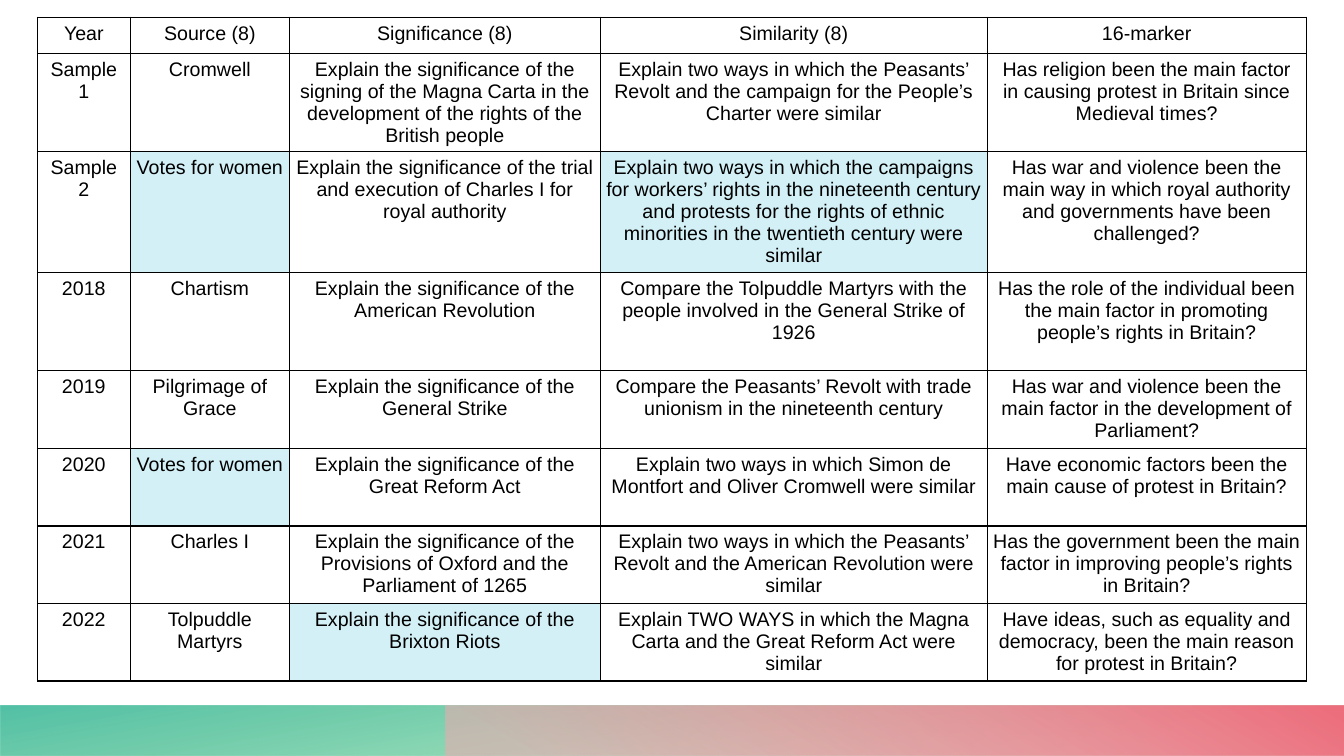
from dataclasses import dataclass

from lxml import etree
from pptx import Presentation
from pptx.dml.color import RGBColor
from pptx.enum import shapes, text
from pptx.oxml import ns
from pptx.util import Pt


@dataclass(frozen=True)
class Theme:
    font: str = "Arial"
    size: float = 14
    ink: str = "000000"
    paper: str = "FFFFFF"
    highlight: str = "D3F0F6"
    border: float = 1
    inset: float = 3.6
    # Each stop: position, colour, opacity in percent
    green: tuple = ((14, "30BA5F", 28), (100, "35B697", 85))
    pink: tuple = ((9, "F5A8B1", 55), (99, "EE6E7D", 100))


THEME = Theme()
PAGE_WIDTH, PAGE_HEIGHT = 960, 540
BAND_HEIGHT = 36
COLUMN_WIDTHS = (66.4, 113.7, 222, 276.5, 227.7)
ROW_HEIGHTS = (25.8, 70.2, 86.4, 70.2, 55.4, 55.4, 55.4, 55.4)
HIGHLIGHTED = {(2, 1), (2, 3), (5, 1), (7, 2)}
QUESTIONS = (
    ("Year", "Source (8)", "Significance (8)", "Similarity (8)", "16-marker"),
    ("Sample 1", "Cromwell",
     "Explain the significance of the signing of the Magna Carta in the "
     "development of the rights of the British people",
     "Explain two ways in which the Peasants’ Revolt and the campaign for the "
     "People’s Charter were similar",
     "Has religion been the main factor in causing protest in Britain since "
     "Medieval times?"),
    ("Sample 2", "Votes for women",
     "Explain the significance of the trial and execution of Charles I for "
     "royal authority",
     "Explain two ways in which the campaigns for workers’ rights in the "
     "nineteenth century and protests for the rights of ethnic minorities in "
     "the twentieth century were similar",
     "Has war and violence been the main way in which royal authority and "
     "governments have been challenged?"),
    ("2018", "Chartism",
     "Explain the significance of the American Revolution",
     "Compare the Tolpuddle Martyrs with the people involved in the General "
     "Strike of 1926",
     "Has the role of the individual been the main factor in promoting "
     "people’s rights in Britain?"),
    ("2019", "Pilgrimage of Grace",
     "Explain the significance of the General Strike",
     "Compare the Peasants’ Revolt with trade unionism in the nineteenth "
     "century",
     "Has war and violence been the main factor in the development of "
     "Parliament?"),
    ("2020", "Votes for women",
     "Explain the significance of the Great Reform Act",
     "Explain two ways in which Simon de Montfort and Oliver Cromwell were "
     "similar",
     "Have economic factors been the main cause of protest in Britain?"),
    ("2021", "Charles I",
     "Explain the significance of the Provisions of Oxford and the Parliament "
     "of 1265",
     "Explain two ways in which the Peasants’ Revolt and the American "
     "Revolution were similar",
     "Has the government been the main factor in improving people’s rights in "
     "Britain?"),
    ("2022", "Tolpuddle Martyrs",
     "Explain the significance of the Brixton Riots",
     "Explain TWO WAYS in which the Magna Carta and the Great Reform Act were "
     "similar",
     "Have ideas, such as equality and democracy, been the main reason for "
     "protest in Britain?"),
)


def add_band(page, left, stops, angle, rotation=0):
    """Add a mirrored gradient band from left to the page's right edge."""
    band = page.shapes.add_shape(
        shapes.MSO_SHAPE.RECTANGLE, Pt(left), Pt(PAGE_HEIGHT - BAND_HEIGHT),
        Pt(PAGE_WIDTH - left), Pt(BAND_HEIGHT))
    band.shadow.inherit = False
    band.line.fill.background()
    band.rotation = rotation
    band._element.spPr.find(ns.qn("a:xfrm")).set("flipH", "1")
    band.fill.gradient()
    band.fill.gradient_angle = 360 - angle  # counted anticlockwise
    for stop, (position, colour, _) in zip(band.fill.gradient_stops, stops):
        stop.position = position / 100
        stop.color.rgb = RGBColor.from_string(colour)
    colours = band._element.spPr.iter(ns.qn("a:srgbClr"))
    for colour, (_, _, opacity) in zip(list(colours), stops):
        etree.SubElement(colour, ns.qn("a:alpha"), val=str(opacity * 1000))


def write(frame, content, *, size=THEME.size, colour=THEME.ink,
          align=text.PP_ALIGN.CENTER):
    para = frame.paragraphs[0]
    para.alignment = align
    span = para.add_run()
    span.text = content
    span.font.name = THEME.font
    span.font.size = Pt(size)
    span.font.color.rgb = RGBColor.from_string(colour)


def outline_cell(cell):
    properties = cell._tc.get_or_add_tcPr()
    for index, side in enumerate(("lnL", "lnR", "lnT", "lnB")):
        line = etree.Element(ns.qn(f"a:{side}"), w=str(Pt(THEME.border)))
        fill = etree.SubElement(line, ns.qn("a:solidFill"))
        etree.SubElement(fill, ns.qn("a:srgbClr"), val=THEME.ink)
        properties.insert(index, line)


def fill_cell(cell, colour):
    if colour is None:
        cell.fill.background()
    else:
        cell.fill.solid()
        cell.fill.fore_color.rgb = RGBColor.from_string(colour)


def cell_colour(row, column):
    if (row, column) in HIGHLIGHTED:
        return THEME.highlight
    is_last = column == len(COLUMN_WIDTHS) - 1
    return THEME.paper if row and is_last else None


def add_question_table(page, left, top):
    table = page.shapes.add_table(
        len(ROW_HEIGHTS), len(COLUMN_WIDTHS), Pt(left), Pt(top),
        Pt(sum(COLUMN_WIDTHS)), Pt(sum(ROW_HEIGHTS))).table
    table.first_row = table.horz_banding = False
    for column, width in zip(table.columns, COLUMN_WIDTHS):
        column.width = Pt(width)
    for row, height in zip(table.rows, ROW_HEIGHTS):
        row.height = Pt(height)
    for r, questions in enumerate(QUESTIONS):
        for c, question in enumerate(questions):
            cell = table.cell(r, c)
            cell.margin_left = cell.margin_right = Pt(THEME.inset)
            cell.margin_top = cell.margin_bottom = Pt(THEME.inset)
            fill_cell(cell, cell_colour(r, c))
            outline_cell(cell)
            write(cell.text_frame, question)


def main():
    deck = Presentation()
    deck.slide_width, deck.slide_height = Pt(PAGE_WIDTH), Pt(PAGE_HEIGHT)
    page = deck.slides.add_slide(deck.slide_layouts[6])
    add_band(page, 0, THEME.green, angle=100, rotation=180)
    add_band(page, 318, THEME.pink, angle=240)
    add_question_table(page, 26.7, 12.3)
    deck.save("out.pptx")


if __name__ == "__main__":
    main()
